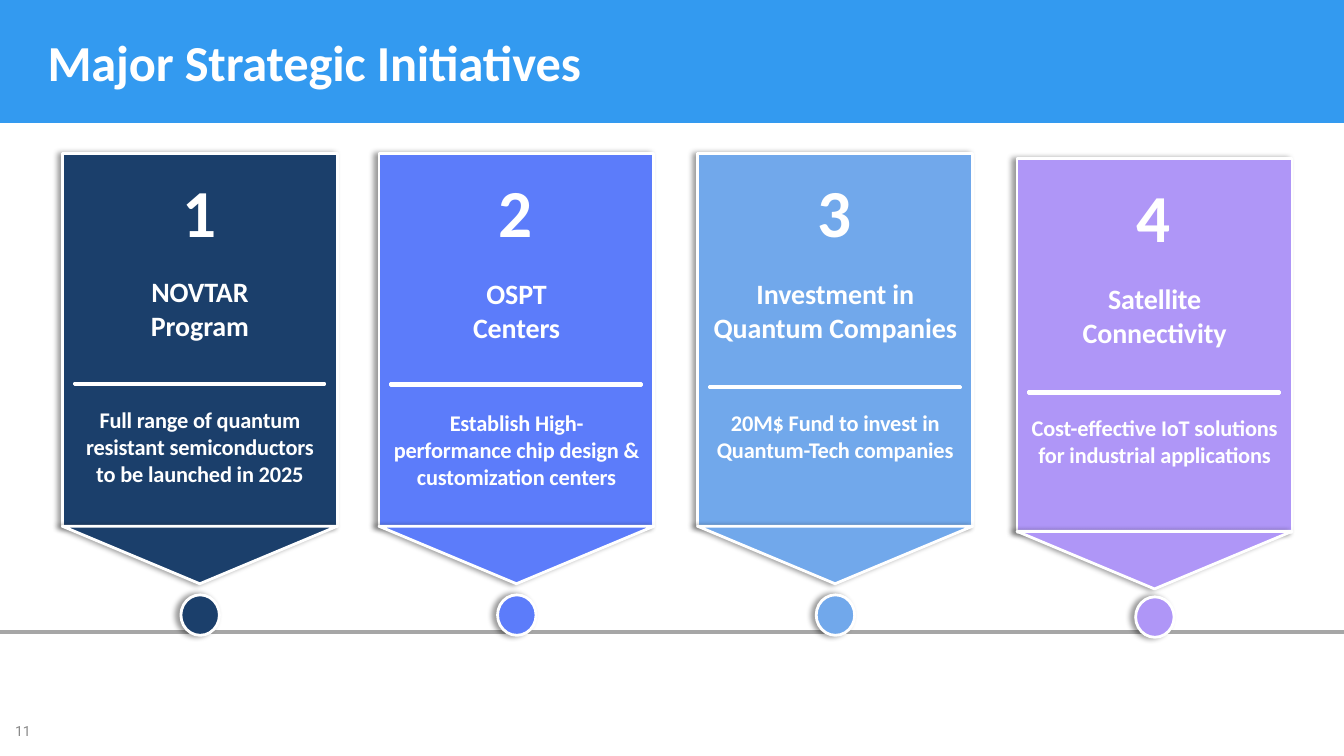
from lxml import etree
from pptx import Presentation
from pptx import util as u
from pptx.dml.color import RGBColor
from pptx.enum import shapes, text
from pptx.oxml import ns

SHAPE = shapes.MSO_SHAPE
ANCHOR = text.MSO_ANCHOR
ALIGN = text.PP_ALIGN
SLIDE_W, SLIDE_H = 33.87, 19.05
CARD_W, CARD_H = 6.93, 9.42
WHITE = "FFFFFF"


def rgb(value):
    return RGBColor.from_string(value)


def add_effect(parent, tag, **attrs):
    return etree.SubElement(parent, ns.qn(tag), **attrs)


class Deck:
    """Holds the text style and the slide being drawn."""

    font = "Calibri"

    def __init__(self):
        self.prs = Presentation()
        self.prs.slide_width = u.Cm(SLIDE_W)
        self.prs.slide_height = u.Cm(SLIDE_H)
        self.slide = self.prs.slides.add_slide(self.prs.slide_layouts[6])

    def shape(self, kind, x, y, w, h, fill, outline=True, shadow=False):
        sp = self.slide.shapes.add_shape(kind, u.Cm(x), u.Cm(y), u.Cm(w), u.Cm(h))
        sp.fill.solid()
        sp.fill.fore_color.rgb = rgb(fill)
        if outline:
            sp.line.color.rgb = rgb(WHITE)
            sp.line.width = u.Pt(2)
        else:
            sp.line.fill.background()
        sp.shadow.inherit = False
        if shadow:
            effects = sp._element.spPr.find(ns.qn("a:effectLst"))
            outer = add_effect(effects, "a:outerShdw", blurRad=str(u.Pt(4)),
                               dist=str(u.Pt(3)), dir="10800000",
                               algn="r", rotWithShape="0")
            color = add_effect(outer, "a:srgbClr", val="000000")
            add_effect(color, "a:alpha", val="40000")
        return sp

    def text(self, lines, x, y, w, h, size, color=WHITE, bold=True, font=None,
             align=ALIGN.CENTER, anchor=ANCHOR.MIDDLE, inset=True, spacing=0):
        sp = self.slide.shapes.add_textbox(u.Cm(x), u.Cm(y), u.Cm(w), u.Cm(h))
        tf = sp.text_frame
        tf.word_wrap = True
        tf.vertical_anchor = anchor
        if not inset:
            tf.margin_left = tf.margin_right = tf.margin_top = tf.margin_bottom = 0
        tf.text = "\n".join(lines)
        for p in tf.paragraphs:
            p.alignment = align
            p.font.name = font or self.font
            p.font.size = u.Pt(size)
            p.font.bold = bold
            p.font.color.rgb = rgb(color)
            if spacing:
                p._p.pPr.find(ns.qn("a:defRPr")).set("spc", str(spacing))

    def line(self, x1, y1, x2, y2, color, width):
        c = self.slide.shapes.add_connector(
            shapes.MSO_CONNECTOR.STRAIGHT, u.Cm(x1), u.Cm(y1), u.Cm(x2), u.Cm(y2))
        c.line.color.rgb = rgb(color)
        c.line.width = u.Pt(width)
        add_effect(c._element.spPr, "a:effectLst")

    def card(self, number, color, x, y, dot_y, title_y, rule_y, body_y, title, body):
        """Draw one numbered pennant with its timeline dot."""
        self.shape(SHAPE.RECTANGLE, x, y, CARD_W, CARD_H, color, shadow=True)
        self.text([str(number)], x + 2.18, y + 0.38, 2.54, 2.08, 48,
                  anchor=ANCHOR.BOTTOM, inset=False)
        self.text(title, x + 0.08, title_y, 6.78, 2.01, 20, spacing=-10)
        tip = self.shape(SHAPE.ISOSCELES_TRIANGLE, x, y + 9.4, CARD_W, 1.45,
                         color, shadow=True)
        tip.rotation = 180
        self.shape(SHAPE.OVAL, x + 2.99, dot_y, 0.97, 1.02, color, shadow=True)
        self.text([body], x + 0.08, body_y, 6.78, 2.31, 16,
                  anchor=ANCHOR.TOP, spacing=-10)
        self.shape(SHAPE.RECTANGLE, x + 0.3, rule_y, 6.32, 0.05, WHITE)


# color, left, top, dot top, title top, rule top, body top, title, body
INITIATIVES = [
    ("1B3F6B", 1.57, 3.86, 14.99, 6.76, 9.65, 10.11, ["NOVTAR", "Program"],
     "Full range of quantum resistant semiconductors to be launched in 2025"),
    ("5C7CFA", 9.55, 3.86, 14.99, 6.82, 9.66, 10.19, ["OSPT", "Centers"],
     "Establish High-performance chip design & customization centers"),
    ("71A8EB", 17.58, 3.86, 14.99, 6.81, 9.73, 10.18,
     ["Investment in Quantum Companies"],
     "20M$ Fund to invest in Quantum-Tech companies"),
    ("AF96F7", 25.63, 3.99, 15.04, 6.94, 9.86, 10.32, ["Satellite", "Connectivity"],
     "Cost-effective IoT solutions for industrial applications"),
]


def main():
    deck = Deck()
    deck.shape(SHAPE.RECTANGLE, 0, 0, SLIDE_W, 3.1, "339AF0", outline=False)
    deck.text(["11"], 0.13, 17.91, 7.62, 1.02, 10, color="898989", bold=False,
              font="Roboto", align=ALIGN.LEFT)
    deck.text(["Major Strategic Initiatives"], 1.2, 0.78, 27, 1.55, 36,
              align=ALIGN.LEFT, inset=False, spacing=-10)
    deck.line(0, 15.93, SLIDE_W, 15.93, "A6A6A6", 3)
    for number, initiative in enumerate(INITIATIVES, 1):
        deck.card(number, *initiative)
    deck.prs.save("out.pptx")


if __name__ == "__main__":
    main()
